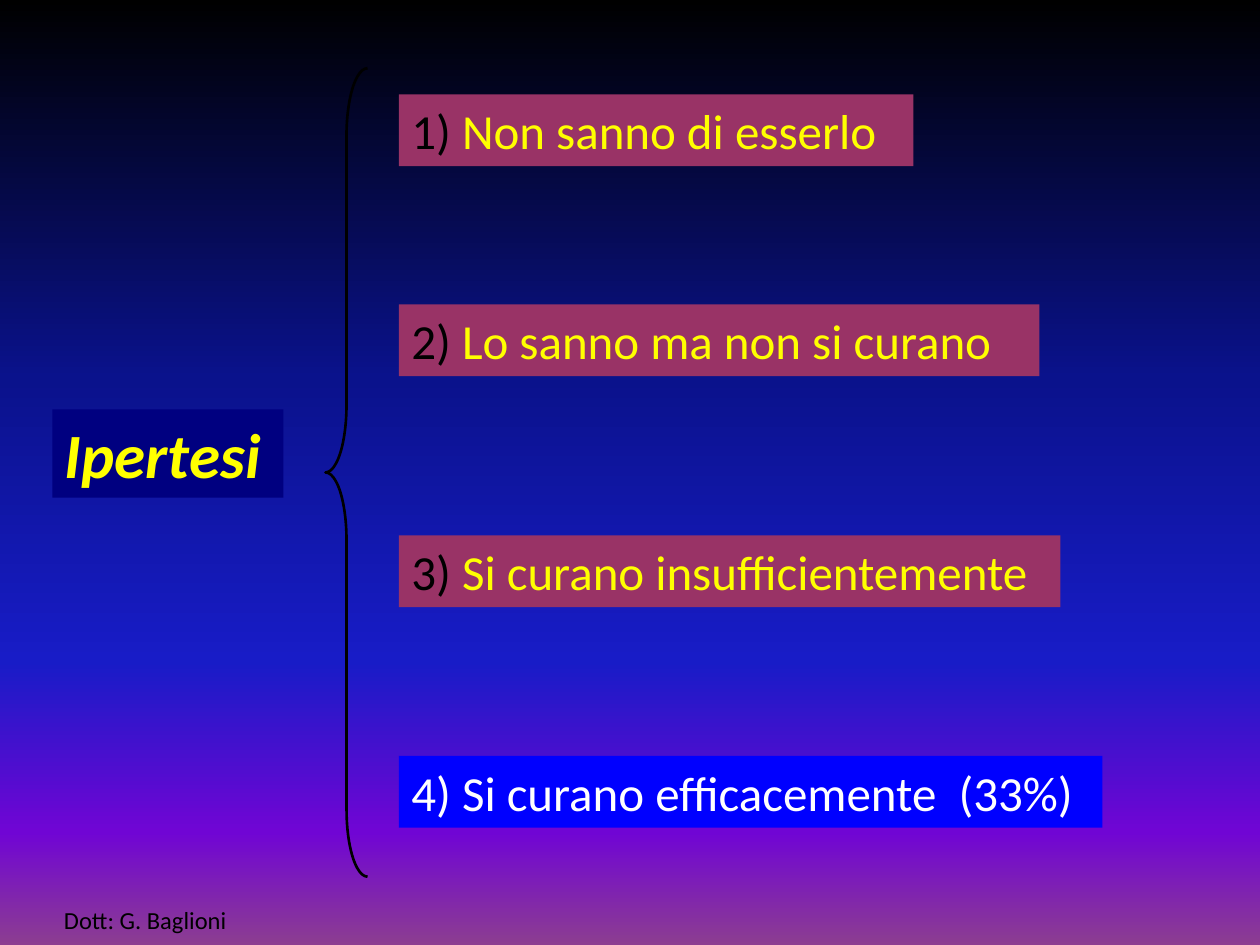
from copy import deepcopy
from pptx import Presentation
from pptx.dml.color import RGBColor
from pptx.enum.shapes import MSO_SHAPE as Kind
from pptx.enum.text import MSO_ANCHOR as Anchor, PP_ALIGN as Align
from pptx.oxml.ns import qn
from pptx.util import Pt

YELLOW, BLACK, WHITE = "FFFF00", "000000", "FFFFFF"
PLUM, NAVY, BLUE = "993366", "000080", "0000FF"
SKY = [(0, BLACK), (0.4, "0A128C"), (0.7, "181CC7"),
       (0.88, "7005D4"), (1, "8C3D91")]
ROWS = [
    (54, 294, PLUM, [("1) ", BLACK), ("Non sanno di esserlo", YELLOW)]),
    (174, 366, PLUM, [("2) ", BLACK), ("Lo sanno ma non si curano", YELLOW)]),
    (306, 378, PLUM, [("3) ", BLACK), ("Si curano insufficientemente", YELLOW)]),
    (432, 402, BLUE, [("4) Si curano efficacemente  (33%)", WHITE)]),
]


def color(code):
    return RGBColor.from_string(code)


def paint(slide):
    """Fill the background with the vertical gradient."""
    fill = slide.background.fill
    fill.gradient()
    fill.gradient_angle = 270
    stops = slide.element.find(".//" + qn("a:gsLst"))
    for _ in range(len(SKY) - len(stops)):
        stops.append(deepcopy(stops[0]))
    for stop, (pos, code) in zip(fill.gradient_stops, SKY):
        stop.position = pos
        stop.color.rgb = color(code)


def write(shape, runs, align=Align.LEFT, anchor=Anchor.TOP, **style):
    frame = shape.text_frame
    frame.word_wrap = True
    frame.vertical_anchor = anchor
    para = frame.paragraphs[0]
    para.alignment = align
    for text, code in runs:
        run = para.add_run()
        run.text = text
        run.font.color.rgb = color(code)
        for key, val in {"name": "Calibri", **style}.items():
            setattr(run.font, key, val)


def label(slide, box, back, runs, **style):
    shape = slide.shapes.add_shape(Kind.RECTANGLE, *map(Pt, box))
    shape.shadow.inherit = False
    shape.fill.solid()
    shape.fill.fore_color.rgb = color(back)
    shape.line.fill.background()
    write(shape, runs, **style)


def brace(slide, box):
    shape = slide.shapes.add_shape(Kind.LEFT_BRACE, *map(Pt, box))
    shape.shadow.inherit = False
    shape.adjustments[0] = 1.6
    shape.adjustments[1] = 0.5
    shape.fill.background()
    shape.line.color.rgb = color(BLACK)
    shape.line.width = Pt(1.5)


def groups(slide, left, high):
    for top, wide, back, runs in ROWS:
        label(slide, (left, top, wide, high), back, runs, size=Pt(28))


def credit(slide, box):
    shape = slide.shapes.add_textbox(*map(Pt, box))
    write(shape, [("Dott: G. Baglioni", BLACK)], Align.CENTER, Anchor.MIDDLE,
          size=Pt(14))


def main():
    deck = Presentation()
    deck.slide_width, deck.slide_height = Pt(720), Pt(540)
    slide = deck.slides.add_slide(deck.slide_layouts[6])
    paint(slide)
    label(slide, (30, 234, 132, 50.4), NAVY, [("Ipertesi", YELLOW)],
          size=Pt(36), bold=True, italic=True)
    brace(slide, (186, 39, 24, 462))
    groups(slide, 228, 41)
    credit(slide, (-31, 511, 228, 29))
    deck.save("out.pptx")


if __name__ == "__main__":
    main()
